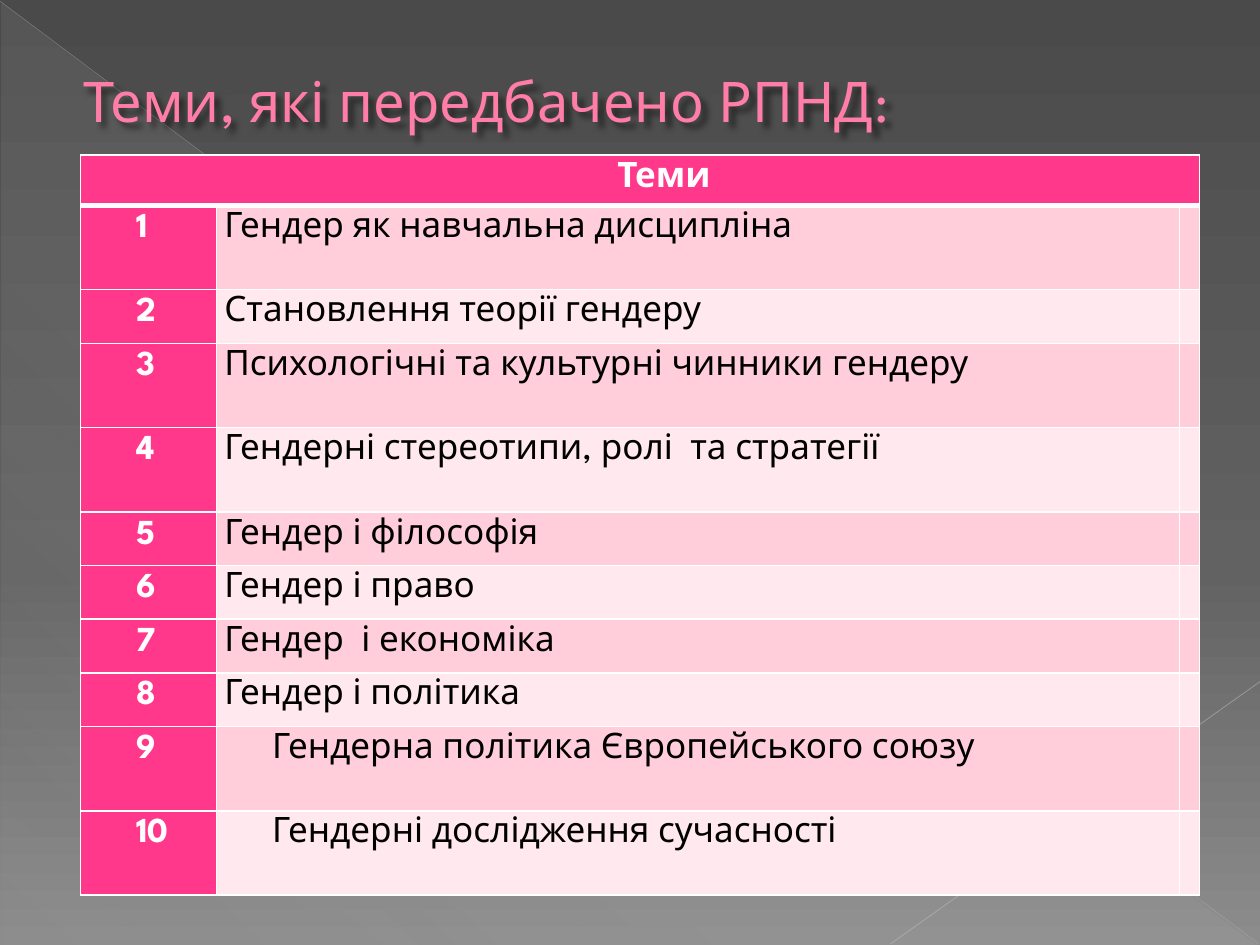
from pptx import Presentation
from pptx.dml.color import RGBColor
from pptx.enum import shapes, text
from pptx.oxml import ns, parse_xml
from pptx.util import Inches, Pt

FONT = "League Spartan"
WHITE, BLACK, PINK = "FFFFFF", "000000", "FF388C"
BANDS = ["FFCEDA", "FFE8EE"]
SHORT, TALL = 0.4, 0.67
COLS = [1.08, 7.64, 0.1]
PAD, INDENT = 0.06, 0.38
TOPICS = [
    ("Гендер як навчальна дисципліна", TALL),
    ("Становлення теорії гендеру", SHORT),
    ("Психологічні та культурні чинники гендеру", TALL),
    ("Гендерні стереотипи, ролі  та стратегії", TALL),
    ("Гендер і філософія", SHORT),
    ("Гендер і право", SHORT),
    ("Гендер  і економіка", SHORT),
    ("Гендер і політика", SHORT),
    ("Гендерна політика Європейського союзу", TALL),
    ("Гендерні дослідження сучасності", TALL),
]


def color(code):
    return RGBColor.from_string(code)


def node(tag, attrs="", body=""):
    return parse_xml(f"<a:{tag} {ns.nsdecls('a')} {attrs}>{body}</a:{tag}>")


def tint(code, alpha=100):
    return (f'<a:srgbClr val="{code}"><a:alpha val="{alpha * 1000}"/>'
            f'</a:srgbClr>')


def blend(part, stops, angle):
    """Swap the solid fill in part for a gradient of (place, colour, opacity)."""
    marks = "".join(f'<a:gs pos="{pos * 1000}">{tint(code, alpha)}</a:gs>'
                    for pos, code, alpha in stops)
    body = (f'<a:gsLst>{marks}</a:gsLst>'
            f'<a:lin ang="{angle * 60000}" scaled="0"/>')
    part.replace(part.find(ns.qn("a:solidFill")),
                 node("gradFill", 'rotWithShape="1"', body))


def style(run, size, code, bold=False):
    looks = {"name": FONT, "size": Pt(size), "bold": bold}
    for key, value in looks.items():
        setattr(run.font, key, value)
    run.font.color.rgb = color(code)


def indent(para, first, left=0):
    props = para._p.get_or_add_pPr()
    for key, value in {"marL": left, "indent": first}.items():
        props.set(key, str(Inches(value)))


def add_ray(slide, start, end, code, width, alpha):
    line = slide.shapes.add_connector(
        shapes.MSO_CONNECTOR.STRAIGHT, *map(Inches, start + end))
    line.line.width = Pt(width)
    line.line.color.rgb = color(code)
    line.line.color._xFill.find(ns.qn("a:srgbClr")).append(
        node("alpha", f'val="{alpha * 1000}"'))
    line.element.spPr.append(node("effectLst"))


def add_backdrop(slide):
    slide.background.fill.solid()
    blend(slide.element.find(".//" + ns.qn("p:bgPr")),
          [(0, "4A4A4A", 100), (60, "626262", 100), (100, "8C8C8C", 100)], 90)
    wedge = slide.shapes.add_shape(
        shapes.MSO_SHAPE.RIGHT_TRIANGLE, *map(Inches, (0.01, 0.02, 9.98, 7.48)))
    wedge.shadow.inherit = False
    wedge.line.fill.background()
    wedge.fill.solid()
    blend(wedge.element.spPr,
          [(0, "D2D2D2", 10), (70, "D2D2D2", 8), (100, "D2D2D2", 1)], 133)
    add_ray(slide, (0, 0.01), (9.99, 7.49), "BFBFBF", 0.39, 35)
    add_ray(slide, (10, 5.41), (7.07, 7.49), "C6C6C6", 0.47, 45)


def set_title(slide, left, top, width, height):
    title = slide.shapes.title
    title.element.getparent().append(title.element)
    place = {"left": left, "top": top, "width": width, "height": height}
    for key, value in place.items():
        setattr(title, key, Inches(value))
    frame = title.text_frame
    frame.word_wrap = True
    frame.vertical_anchor = text.MSO_ANCHOR.MIDDLE
    para = frame.paragraphs[0]
    para.alignment = text.PP_ALIGN.LEFT
    indent(para, 0, 0.53)
    run = para.add_run()
    run.text = "Теми, які передбачено РПНД:"
    style(run, 32, "FF7DA7")
    run.font._element.insert(0, node(
        "ln", f'w="{Pt(0.5)}"',
        f'<a:solidFill>{tint("B12761")}</a:solidFill>'))
    title.element.spPr.append(node(
        "effectLst", "",
        f'<a:outerShdw blurRad="{Pt(3)}" dist="{Pt(4)}" dir="2700000">'
        f'{tint(BLACK, 50)}</a:outerShdw>'))


def frame_cell(cell, fill, bottom=1, top=1):
    """Fill a cell, pad it and draw its white borders."""
    for side in ("left", "top", "right", "bottom"):
        setattr(cell, f"margin_{side}", Inches(PAD))
    props = cell._tc.get_or_add_tcPr()
    for side, width in {"L": 1, "R": 1, "T": top, "B": bottom}.items():
        props.append(node(f"ln{side}", f'w="{Pt(width)}"',
                          f'<a:solidFill>{tint(WHITE)}</a:solidFill>'))
    cell.fill.solid()
    cell.fill.fore_color.rgb = color(fill)


def write(cell, words, code, bold=False, align=text.PP_ALIGN.LEFT):
    para = cell.text_frame.paragraphs[0]
    para.alignment = align
    run = para.add_run()
    run.text = words
    style(run, 20, code, bold)
    return para


def add_topics(slide, left, top):
    rows = [SHORT] + [tall for _, tall in TOPICS]
    table = slide.shapes.add_table(
        len(rows), len(COLS),
        *map(Inches, (left, top, sum(COLS), sum(rows)))).table
    for col, width in zip(table.columns, COLS):
        col.width = Inches(width)
    for row, height in zip(table.rows, rows):
        row.height = Inches(height)

    head = table.cell(0, 0)
    head.merge(table.cell(0, len(COLS) - 1))
    for cell in table.rows[0].cells:
        frame_cell(cell, PINK, bottom=3)
    indent(write(head, "Теми", WHITE, True, text.PP_ALIGN.CENTER), INDENT)

    for num, (topic, _) in enumerate(TOPICS, 1):
        band = BANDS[(num - 1) % 2]
        cells = [table.cell(num, col) for col in range(len(COLS))]
        for cell, fill in zip(cells, (PINK, band, band)):
            frame_cell(cell, fill, top=3 if num == 1 else 1)
        indent(write(cells[0], str(num), WHITE, True), INDENT)
        para = write(cells[1], topic, BLACK)
        if num > 8:
            indent(para, INDENT)
        cells[2].margin_left = cells[2].margin_right = 0


def main():
    deck = Presentation()
    deck.slide_width, deck.slide_height = Inches(10), Inches(7.5)
    slide = deck.slides.add_slide(deck.slide_layouts[5])
    add_backdrop(slide)
    set_title(slide, 0.03, 0.44, 9, 0.71)
    add_topics(slide, 0.64, 1.23)
    deck.save("out.pptx")


if __name__ == "__main__":
    main()
